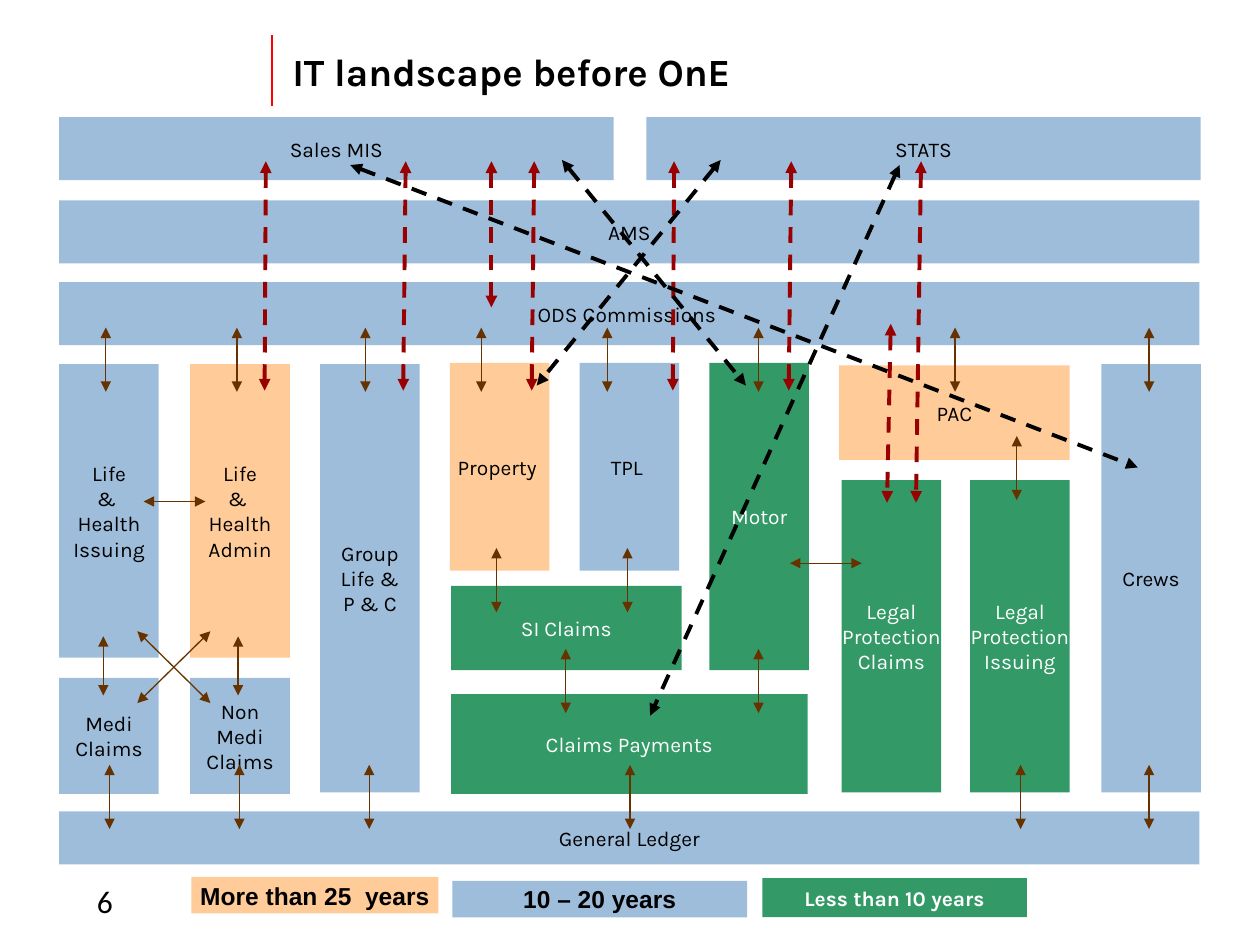
"""Build the slide showing the IT landscape before OnE."""
from pptx import Presentation
from pptx.dml.color import RGBColor
from pptx.enum.dml import MSO_LINE_DASH_STYLE as Dash
from pptx.enum.shapes import MSO_CONNECTOR as Connector, MSO_SHAPE as Shape
from pptx.enum.text import MSO_ANCHOR as Anchor, PP_ALIGN as Align
from pptx.oxml.ns import qn
from pptx.util import Inches, Pt
from lxml.etree import SubElement

COLOURS = {
    "old": "FFCC99", "middle": "9EBDDA", "new": "339966",
    "black": "000000", "white": "FFFFFF",
    "rule": "FF0000", "brown": "663300", "crimson": "990000",
}


def add_box(page, place, fill, text, font="Karla", size=12, bold=False):
    box = page.shapes.add_shape(Shape.RECTANGLE, *[Inches(value) for value in place])
    box.shadow.inherit = False
    box.fill.solid()
    box.fill.fore_color.rgb = RGBColor.from_string(COLOURS[fill])
    box.line.fill.background()
    frame = box.text_frame
    frame.word_wrap = False
    frame.vertical_anchor = Anchor.MIDDLE
    frame.text = text
    for para in frame.paragraphs:
        para.alignment = Align.CENTER
        para.font.name = font
        para.font.size = Pt(size)
        para.font.bold = bold
        ink = "white" if fill == "new" else "black"
        para.font.color.rgb = RGBColor.from_string(COLOURS[ink])


def add_line(page, ends, colour, width, dashed=False, arrows=True):
    line = page.shapes.add_connector(Connector.STRAIGHT, *[Inches(value) for value in ends])
    line.line.color.rgb = RGBColor.from_string(COLOURS[colour])
    line.line.width = Pt(width)
    if dashed:
        line.line.dash_style = Dash.DASH
    if arrows:
        outline = line.line._get_or_add_ln()
        SubElement(outline, qn("a:headEnd"), type="triangle")
        SubElement(outline, qn("a:tailEnd"), type="triangle")
    SubElement(line._element.spPr, qn("a:effectLst"))


deck = Presentation()
deck.slide_width, deck.slide_height = Inches(10), Inches(7.5)
page = deck.slides.add_slide(deck.slide_layouts[5])

add_line(page, (2.16, 0.28, 2.16, 0.84), "rule", 1, arrows=False)

title = page.shapes.title
title.left, title.top = Inches(2.22), Inches(0.21)
title.width, title.height = Inches(7.33), Inches(0.59)
title.text_frame.text = "IT landscape before OnE"
title.text_frame.vertical_anchor = Anchor.BOTTOM
heading = title.text_frame.paragraphs[0]
heading.alignment = Align.LEFT
heading.font.name = "Karla"
heading.font.size = Pt(22)
heading.font.bold = True
heading.font.color.rgb = RGBColor.from_string(COLOURS["black"])

LEFT, COLUMN, BAND = 0.47, 0.79, 9.05
systems = [
    ((5.63, 2.88, COLUMN, 2.44), "new", "Motor"),
    ((3.58, 4.65, 1.83, 0.67), "new", "SI Claims"),
    ((3.58, 5.51, 2.83, 0.79), "new", "Claims Payments"),
    ((6.68, 3.81, COLUMN, 2.48), "new", "Legal\nProtection\nClaims"),
    ((7.7, 3.81, COLUMN, 2.48), "new", "Legal\nProtection\nIssuing"),
    ((3.57, 2.88, COLUMN, 1.65), "old", "Property "),
    ((6.66, 2.9, 1.83, 0.75), "old", "PAC"),
    ((1.51, 2.89, COLUMN, 2.33), "old", "Life\n& \nHealth\nAdmin"),
    ((4.6, 2.88, COLUMN, 1.65), "middle", "TPL "),
    ((8.74, 2.89, COLUMN, 3.4), "middle", "Crews"),
    ((2.54, 2.89, COLUMN, 3.4), "middle", "Group\nLife &\nP & C"),
    ((LEFT, 2.24, BAND, 0.5), "middle", "ODS Commissions "),
    ((LEFT, 2.89, COLUMN, 2.33), "middle", "Life\n& \nHealth\nIssuing"),
    ((LEFT, 5.38, COLUMN, 0.92), "middle", "Medi\nClaims"),
    ((1.51, 5.38, COLUMN, 0.92), "middle", "Non\nMedi\nClaims"),
    ((LEFT, 6.44, BAND, 0.42), "middle", "General Ledger"),
    ((LEFT, 1.59, BAND, 0.5), "middle", "AMS"),
    ((LEFT, 0.93, 4.4, 0.5), "middle", "Sales MIS"),
    ((5.13, 0.93, 4.4, 0.5), "middle", "STATS"),
]
for place, age, name in systems:
    add_box(page, place, age, name)

add_box(page, (1.52, 6.96, 1.96, 0.29), "old", "More than 25  years", "Arial", 14, True)
add_box(page, (3.59, 6.99, 2.34, 0.29), "middle", "10 – 20 years", "Arial", 14, True)
add_box(page, (6.05, 6.97, 2.1, 0.31), "new", "Less than 10 years", bold=True)

vertical_links = [
    (2.6, 3.11, (0.84, 1.88, 2.9, 3.82, 4.82, 6.02, 7.58, 9.12)),
    (6.07, 6.58, (0.87, 1.9, 2.93, 5, 8.1, 9.12)),
    (4.35, 4.86, (3.94, 4.98)),
    (5.15, 5.66, (4.49, 6.02)),
    (3.46, 3.97, (8.07,)),
    (5.05, 5.52, (0.82, 1.89)),
]
for top, bottom, columns in vertical_links:
    for x in columns:
        add_line(page, (x, top, x, bottom), "brown", 0.75)

cross_links = [
    (6.27, 4.47, 6.84, 4.47),
    (1.14, 3.98, 1.63, 3.98),
    (1.09, 5.01, 1.67, 5.58),
    (1.67, 5.01, 1.09, 5.58),
]
for ends in cross_links:
    add_line(page, ends, "brown", 0.75)

reporting_links = [
    (3.22, 1.28, 3.2, 3.1),
    (2.11, 1.28, 2.1, 3.1),
    (3.9, 1.28, 3.9, 2.44),
    (4.24, 1.28, 4.22, 3.1),
    (5.35, 1.28, 5.34, 3.1),
    (6.28, 1.28, 6.26, 3.1),
    (7.07, 2.57, 7.04, 3.99),
    (7.31, 1.28, 7.27, 3.99),
]
for ends in reporting_links:
    add_line(page, ends, "crimson", 2.25, dashed=True)

long_links = [
    (2.78, 1.31, 9.03, 3.71),
    (7.14, 1.31, 5.16, 5.68),
    (5.72, 1.27, 4.26, 3.06),
    (4.46, 1.27, 5.92, 3.06),
]
for ends in long_links:
    add_line(page, ends, "black", 2.25, dashed=True)

number = page.shapes.add_textbox(Inches(0.67), Inches(6.95), Inches(0.71), Inches(0.4))
number.text_frame.word_wrap = True
number.text_frame.text = "6"
digit = number.text_frame.paragraphs[0]
digit.font.name = "Calibri"
digit.font.size = Pt(18)
digit.font.color.rgb = RGBColor.from_string(COLOURS["black"])

deck.save("out.pptx")
